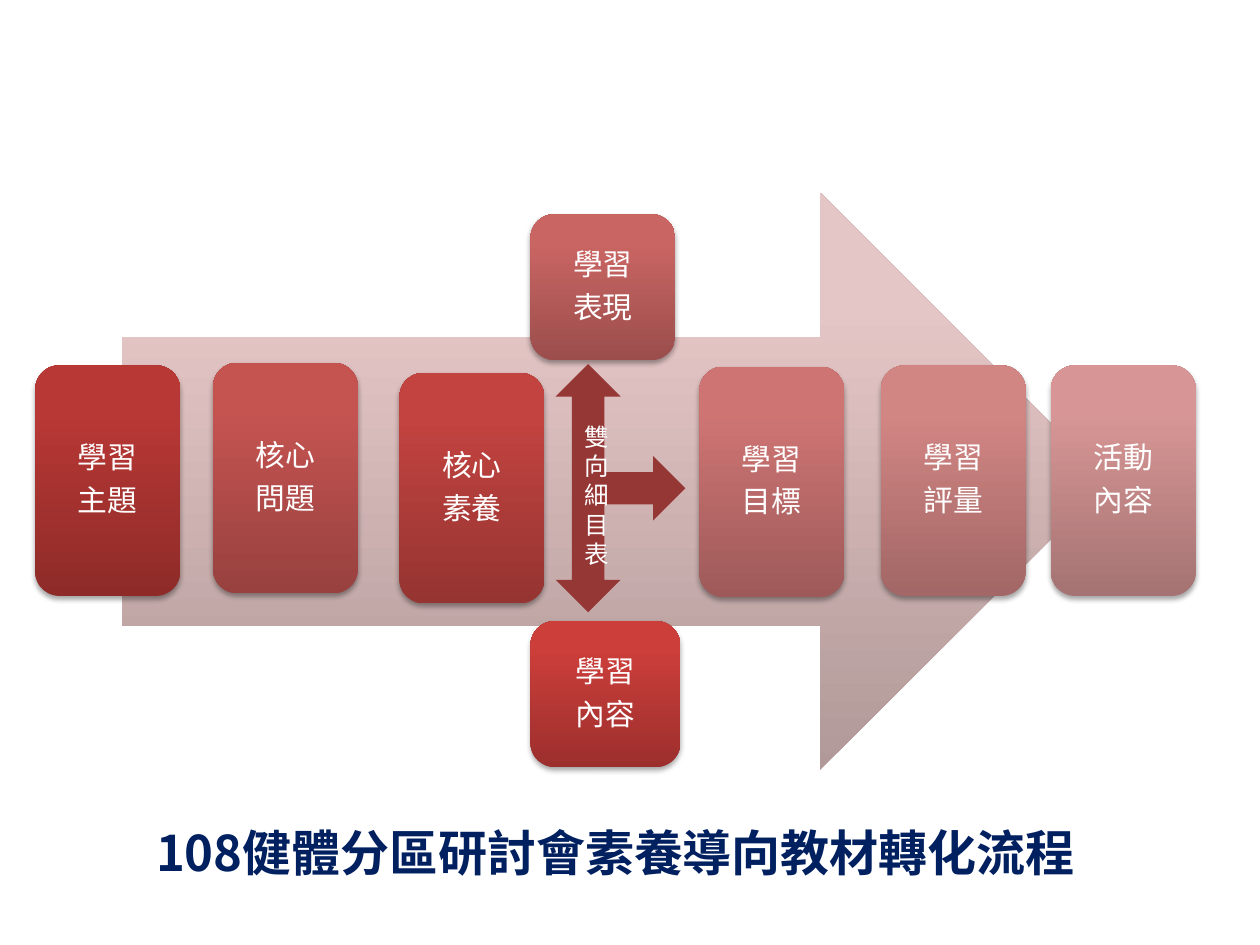
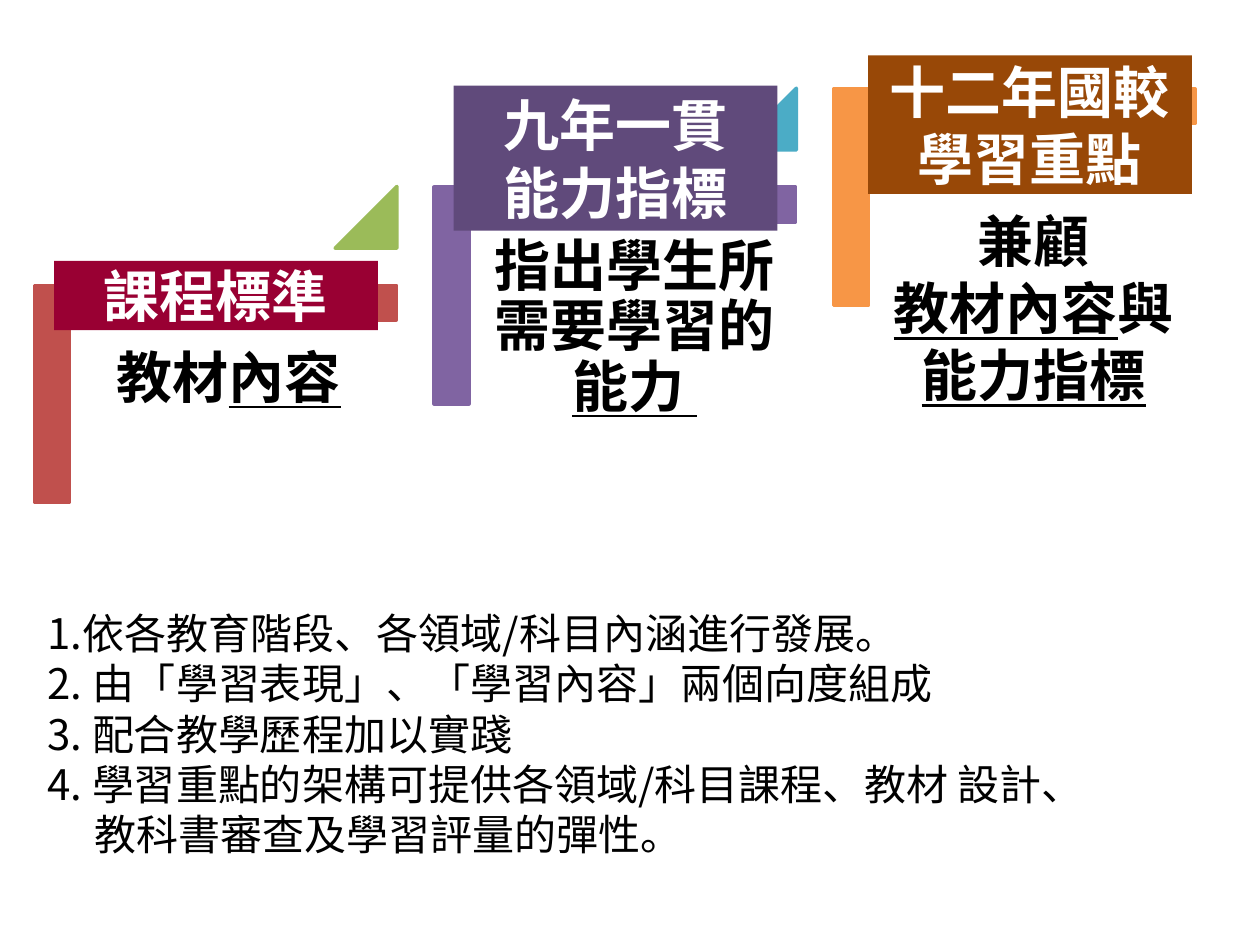
from dataclasses import dataclass
from typing import NamedTuple

from lxml.etree import SubElement
from pptx import Presentation
from pptx.dml.color import RGBColor
from pptx.enum.shapes import MSO_SHAPE as Shape
from pptx.enum.text import MSO_ANCHOR as Anchor, PP_ALIGN as Align
from pptx.oxml.ns import qn
from pptx.util import Inches, Pt

FONT = "Noto Sans CJK SC"
WHITE = RGBColor(0xFF, 0xFF, 0xFF)
BLACK = RGBColor(0x00, 0x00, 0x00)
NAVY = RGBColor(0x00, 0x20, 0x60)
MAROON = RGBColor(0x95, 0x37, 0x35)
ARROW_DARK = RGBColor(0xB0, 0x99, 0x98)
ARROW_LIGHT = RGBColor(0xE5, 0xC6, 0xC6)
RED = RGBColor(0xC0, 0x50, 0x4D)
GREEN = RGBColor(0x9B, 0xBB, 0x59)
PURPLE = RGBColor(0x80, 0x64, 0xA2)
TEAL = RGBColor(0x4B, 0xAC, 0xC6)
ORANGE = RGBColor(0xF7, 0x96, 0x46)
CRIMSON = RGBColor(0x99, 0x00, 0x33)
DARK_PURPLE = RGBColor(0x60, 0x4A, 0x7B)
BROWN = RGBColor(0x98, 0x48, 0x07)


class Area(NamedTuple):
    left: float
    top: float
    width: float
    height: float

    def lengths(self) -> list:
        return [Inches(value) for value in self]


class Span(NamedTuple):
    text: str
    underline: bool = False


@dataclass(frozen=True)
class Style:
    size: int
    color: RGBColor
    bold: bool = False
    align: Align = Align.CENTER
    line_spacing: float = 1.0
    space_after: float = 0
    inset: float | None = None
    anchor: Anchor = Anchor.MIDDLE


@dataclass(frozen=True)
class Card:
    lines: tuple[str, str]
    area: Area
    dark: str
    light: str


@dataclass(frozen=True)
class Stage:
    color: RGBColor
    banner_color: RGBColor
    banner: Area
    title: list[str]
    body_top: float
    body: list[list[Span]]
    body_style: Style
    corner_color: RGBColor | None = None


CARD_STYLE = Style(17, WHITE, line_spacing=0.9, space_after=6, inset=0.07)
TITLE_STYLE = Style(28, NAVY, bold=True, align=Align.LEFT, anchor=Anchor.TOP)
TABLE_STYLE = Style(14, WHITE)
BANNER_STYLE = Style(32, WHITE, bold=True)
TIGHT_BODY = Style(32, BLACK, bold=True, line_spacing=0.9, inset=0.13,
                   anchor=Anchor.TOP)
LOOSE_BODY = Style(32, BLACK, bold=True, inset=0.13, anchor=Anchor.TOP)
NOTE_STYLE = Style(24, BLACK, align=Align.LEFT, anchor=Anchor.TOP)

CARD_WIDTH, TALL, SHORT = 1.15, 1.83, 1.16
CARDS = [
    Card(("學習", "主題"), Area(0.28, 2.9, CARD_WIDTH, TALL), "8E2B28", "B83835"),
    Card(("核心", "素養"), Area(3.17, 2.96, CARD_WIDTH, TALL), "953431", "C24340"),
    Card(("核心", "問題"), Area(1.69, 2.88, CARD_WIDTH, TALL), "98413F", "C55451"),
    Card(("學習", "表現"), Area(4.21, 1.7, CARD_WIDTH, SHORT), "9B4E4C", "C96563"),
    Card(("學習", "目標"), Area(5.55, 2.91, CARD_WIDTH, TALL), "9E5A59", "CE7574"),
    Card(("學習", "評量"), Area(6.99, 2.9, CARD_WIDTH, TALL), "A26766", "D28684"),
    Card(("活動", "內容"), Area(8.34, 2.9, CARD_WIDTH, TALL), "A57373", "D79695"),
    Card(("學習", "內容"), Area(4.21, 4.93, 1.19, SHORT), "9C2F2D", "CB3E3A"),
]

STAGE_STEP, STAGE_RISE = 3.17, 0.78
STAGES = [
    Stage(RED, CRIMSON, Area(0.43, 2.07, 2.57, 0.55), ["課程標準"], 2.65,
          [[Span("教材"), Span("內容", True), Span(" ")]], TIGHT_BODY, GREEN),
    Stage(PURPLE, DARK_PURPLE, Area(3.6, 0.68, 2.57, 1.15), ["九年一貫", "能力指標"], 1.76,
          [[Span("指出學生所需要學習的"), Span("能力 ", True)]], TIGHT_BODY, TEAL),
    Stage(ORANGE, BROWN, Area(6.89, 0.44, 2.57, 1.1), ["十二年國較學習重點"], 1.51,
          [[Span("兼顧")],
           [Span("教材內容", True), Span("與"), Span("能力指標", True)]], LOOSE_BODY),
]
NOTES = [
    "1.依各教育階段、各領域/科目內涵進行發展。",
    "2. 由「學習表現」、「學習內容」兩個向度組成",
    "3. 配合教學歷程加以實踐",
    "4. 學習重點的架構可提供各領域/科目課程、教材 設計、",
    "教科書審查及學習評量的彈性。",
]


def plain(lines) -> list[list[Span]]:
    return [[Span(line)] for line in lines]


def write(frame, paragraphs: list[list[Span]], style: Style) -> None:
    frame.word_wrap = True
    frame.vertical_anchor = style.anchor
    if style.inset is not None:
        frame.margin_left = frame.margin_right = Inches(style.inset)
        frame.margin_top = frame.margin_bottom = Inches(style.inset)
    for index, spans in enumerate(paragraphs):
        para = frame.add_paragraph() if index else frame.paragraphs[0]
        para.alignment = style.align
        para.line_spacing = style.line_spacing
        para.space_after = Pt(style.space_after)
        for span in spans:
            run = para.add_run()
            run.text = span.text
            run.font.name = FONT
            run.font.size = Pt(style.size)
            run.font.bold = style.bold
            run.font.color.rgb = style.color
            if span.underline:
                run.font.underline = True
            SubElement(run._r.get_or_add_rPr(), qn("a:ea"), typeface=FONT)


def add_text(slide, area: Area, paragraphs: list[list[Span]], style: Style):
    box = slide.shapes.add_textbox(*area.lengths())
    write(box.text_frame, paragraphs, style)
    return box


def add_block(slide, kind: Shape, area: Area, color: RGBColor, outlined: bool = False):
    block = slide.shapes.add_shape(kind, *area.lengths())
    block.shadow.inherit = False
    block.fill.solid()
    block.fill.fore_color.rgb = color
    if outlined:
        block.line.color.rgb = color
        block.line.width = Pt(2)
    else:
        block.line.fill.background()
    return block


def shade(block, dark: RGBColor, light: RGBColor) -> None:
    """Fill with a gradient that rises from dark to light."""
    block.fill.gradient()
    block.fill.gradient_angle = 90
    for stop, color, position in zip(block.fill.gradient_stops, (dark, light), (0, 0.8)):
        stop.color.rgb = color
        stop.position = position


def drop_shadow(block) -> None:
    effects = block._element.spPr.find(qn("a:effectLst"))
    shadow = SubElement(effects, qn("a:outerShdw"), blurRad=str(Pt(3.1)),
                        dist=str(Pt(1.8)), dir="5400000", rotWithShape="0")
    color = SubElement(shadow, qn("a:srgbClr"), val="000000")
    SubElement(color, qn("a:alpha"), val="35000")


def add_card(slide, card: Card) -> None:
    light = RGBColor.from_string(card.light)
    block = add_block(slide, Shape.ROUNDED_RECTANGLE, card.area, light)
    shade(block, RGBColor.from_string(card.dark), light)
    drop_shadow(block)
    write(block.text_frame, plain(card.lines), CARD_STYLE)


def add_stage(slide, index: int, stage: Stage) -> None:
    shift, rise = index * STAGE_STEP, index * STAGE_RISE
    bracket = add_block(slide, Shape.CORNER, Area(0.85 + shift, 1.69 - rise, 1.72, 2.87),
                        stage.color, outlined=True)
    bracket.rotation = 90
    bracket.adjustments[0] = bracket.adjustments[1] = 0.16
    add_text(slide, Area(0.57 + shift, stage.body_top, 2.59, 1.8),
             stage.body, stage.body_style)
    if stage.corner_color is not None:
        corner = add_block(slide, Shape.ISOSCELES_TRIANGLE,
                           Area(2.66 + shift, 1.48 - rise, 0.49, 0.49),
                           stage.corner_color, outlined=True)
        corner.adjustments[0] = 1


def add_banner(slide, stage: Stage) -> None:
    banner = add_block(slide, Shape.RECTANGLE, stage.banner, stage.banner_color)
    write(banner.text_frame, plain(stage.title), BANNER_STYLE)


def build_process(slide) -> None:
    arrow = add_block(slide, Shape.RIGHT_ARROW, Area(0.97, 1.53, 7.83, 4.58), ARROW_LIGHT)
    shade(arrow, ARROW_DARK, ARROW_LIGHT)
    for card in CARDS:
        add_card(slide, card)
    add_text(slide, Area(1.14, 6.48, 7.5, 0.57),
             plain(["108健體分區研討會素養導向教材轉化流程"]), TITLE_STYLE)
    link = add_block(slide, Shape.LEFT_RIGHT_UP_ARROW, Area(3.94, 3.36, 1.97, 1.03), MAROON)
    link.rotation = 90
    add_text(slide, Area(4.54, 3.12, 0.27, 1.62), plain(["雙向細目表"]), TABLE_STYLE)


def build_stages(slide) -> None:
    for index, stage in enumerate(STAGES):
        add_stage(slide, index, stage)
    for stage in STAGES:
        add_banner(slide, stage)
    notes = add_text(slide, Area(0.28, 4.77, 8.66, 2.12), plain(NOTES), NOTE_STYLE)
    continuation = notes.text_frame.paragraphs[-1]
    continuation._p.get_or_add_pPr().set("marL", str(Inches(0.37)))


def main() -> None:
    deck = Presentation()
    deck.slide_width, deck.slide_height = Inches(10), Inches(7.5)
    blank = deck.slide_layouts[6]
    for build in (build_process, build_stages):
        build(deck.slides.add_slide(blank))
    deck.save("out.pptx")


if __name__ == "__main__":
    main()
